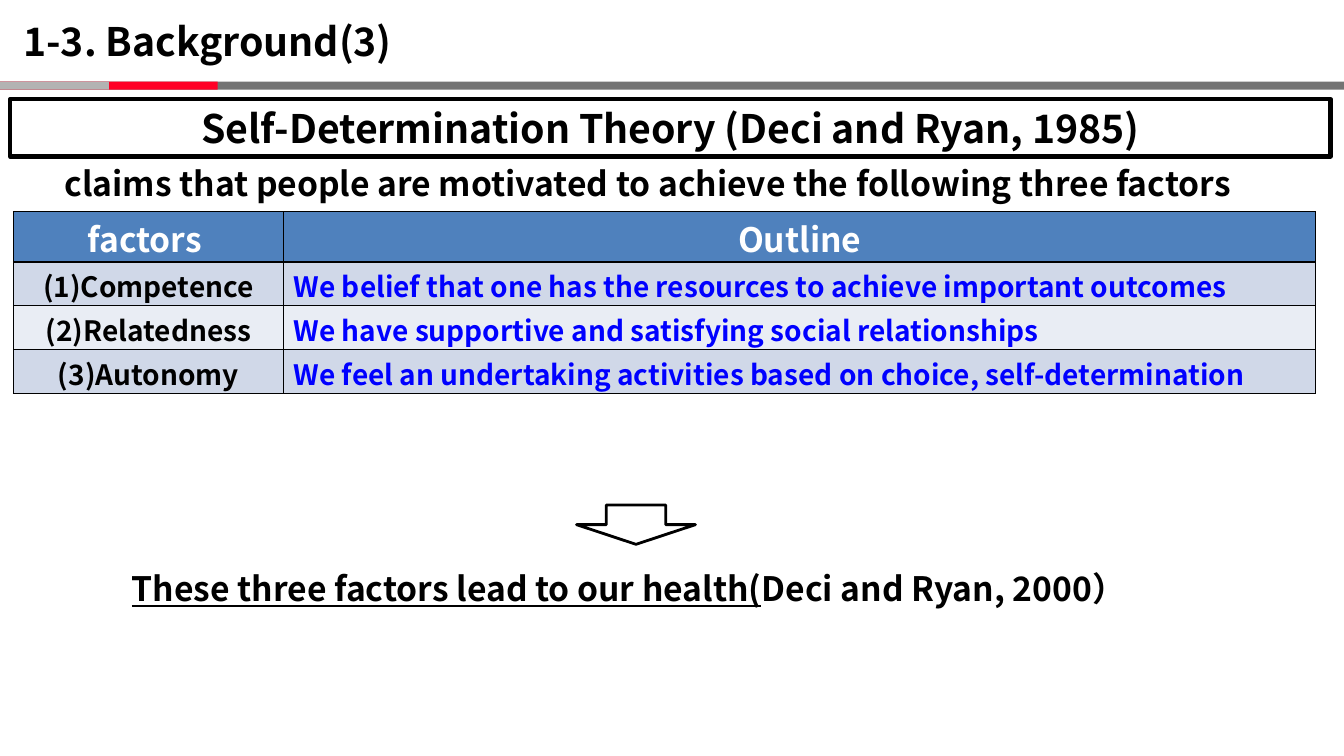
from lxml.etree import SubElement
from pptx import Presentation
from pptx.dml.color import RGBColor
from pptx.enum.shapes import MSO_SHAPE
from pptx.enum.text import MSO_ANCHOR, PP_ALIGN
from pptx.oxml.ns import qn
from pptx.util import Inches, Pt

BLACK = RGBColor(0x00, 0x00, 0x00)
WHITE = RGBColor(0xFF, 0xFF, 0xFF)
BLUE = RGBColor(0x00, 0x00, 0xFF)
RED = RGBColor(0xFF, 0x00, 0x26)
DARK_GREY = RGBColor(0x73, 0x73, 0x73)
LIGHT_GREY = RGBColor(0xB3, 0xB3, 0xB3)
HEADER_FILL = RGBColor(0x4F, 0x81, 0xBD)
BAND_FILLS = (RGBColor(0xD0, 0xD8, 0xE8), RGBColor(0xE9, 0xED, 0xF4))

FACTORS = [
    ("factors ", "Outline"),
    ("(1)Competence",
     "We belief that one has the resources to achieve important outcomes"),
    ("(2)Relatedness",
     "We have supportive and satisfying social relationships"),
    ("(3)Autonomy",
     "We feel an undertaking activities based on choice, self-determination"),
]


class SlideBuilder:
    """Draws on one slide; lengths are percentages of its width and height."""

    font_name = "Noto Sans CJK JP"

    def __init__(self, presentation):
        self.column = presentation.slide_width / 100
        self.row = presentation.slide_height / 100
        self.slide = presentation.slides.add_slide(presentation.slide_layouts[6])

    def place(self, left, top, width, height):
        return (round(left * self.column), round(top * self.row),
                round(width * self.column), round(height * self.row))

    def fill_text(self, frame, runs, size, color=BLACK, align=PP_ALIGN.LEFT):
        """Fill a text frame with one paragraph of (text, underline) runs."""
        frame.word_wrap = True
        paragraph = frame.paragraphs[0]
        paragraph.alignment = align
        for text, underline in runs:
            run = paragraph.add_run()
            run.text = text
            run.font.color.rgb = color
            style = {"name": self.font_name, "size": Pt(size),
                     "bold": True, "underline": underline}
            for attribute, value in style.items():
                setattr(run.font, attribute, value)
            SubElement(run.font._element, qn("a:ea"), typeface=self.font_name)

    def text(self, area, runs, size):
        box = self.slide.shapes.add_textbox(*self.place(*area))
        box.text_frame.vertical_anchor = MSO_ANCHOR.MIDDLE
        self.fill_text(box.text_frame, runs, size)

    def shape(self, preset, area, fill=None, line_width=None):
        shape = self.slide.shapes.add_shape(preset, *self.place(*area))
        shape.shadow.inherit = False
        if fill is None:
            shape.fill.background()
        else:
            shape.fill.solid()
            shape.fill.fore_color.rgb = fill
        if line_width is None:
            shape.line.fill.background()
        else:
            shape.line.color.rgb = BLACK
            shape.line.width = Pt(line_width)
        return shape

    def table(self, left, top, widths, heights, rows):
        area = self.place(left, top, sum(widths), sum(heights))
        table = self.slide.shapes.add_table(len(rows), len(widths), *area).table
        for column, width in zip(table.columns, widths):
            column.width = round(width * self.column)
        for row, height in zip(table.rows, heights):
            row.height = round(height * self.row)
        for r, texts in enumerate(rows):
            for c, text in enumerate(texts):
                cell = table.cell(r, c)
                if r == 0:
                    fill, color, size = HEADER_FILL, WHITE, 24
                else:
                    fill, size = BAND_FILLS[(r - 1) % 2], 20
                    color = BLUE if c else BLACK
                align = PP_ALIGN.LEFT if r and c else PP_ALIGN.CENTER
                layout = {"margin_top": 0, "margin_bottom": 0,
                          "vertical_anchor": MSO_ANCHOR.BOTTOM}
                for attribute, value in layout.items():
                    setattr(cell, attribute, value)
                self.fill_text(cell.text_frame, [(text, False)], size, color, align)
                self.border(cell)
                cell.fill.solid()
                cell.fill.fore_color.rgb = fill

    def border(self, cell):
        properties = cell._tc.get_or_add_tcPr()
        for side in ("a:lnL", "a:lnR", "a:lnT", "a:lnB"):
            edge = SubElement(properties, qn(side), w=str(Pt(1)))
            solid = SubElement(edge, qn("a:solidFill"))
            SubElement(solid, qn("a:srgbClr"), val=str(BLACK))


def main():
    presentation = Presentation()
    presentation.slide_width = Inches(13.33)
    presentation.slide_height = Inches(7.5)
    builder = SlideBuilder(presentation)

    for width, color in ((100, DARK_GREY), (16.2, RED), (8.1, LIGHT_GREY)):
        builder.shape(MSO_SHAPE.RECTANGLE, (0, 10.8, width, 1.07), color)
    builder.text((1, 1.6, 33.5, 7.6), [("1-3. Background(3)", False)], 28)

    theory = builder.shape(MSO_SHAPE.RECTANGLE, (0.75, 13.1, 98.25, 7.6),
                           line_width=3)
    builder.fill_text(theory.text_frame,
                      [("Self-Determination Theory (Deci and Ryan, 1985)", False)],
                      28, align=PP_ALIGN.CENTER)
    builder.text((4.05, 20.9, 95.5, 6.67),
                 [("claims that people are motivated to achieve "
                   "the following three factors", False)], 24)

    builder.table(1, 28, (20.1, 76.8), (6.67, 5.78, 5.78, 5.78), FACTORS)

    builder.shape(MSO_SHAPE.DOWN_ARROW, (42.9, 66.8, 8.85, 5.2), line_width=2)
    builder.text((9.08, 74.4, 83.6, 6.67),
                 [("These three factors lead to our health(", True),
                  ("Deci and Ryan, 2000）", False)], 24)

    presentation.save("out.pptx")


if __name__ == "__main__":
    main()
